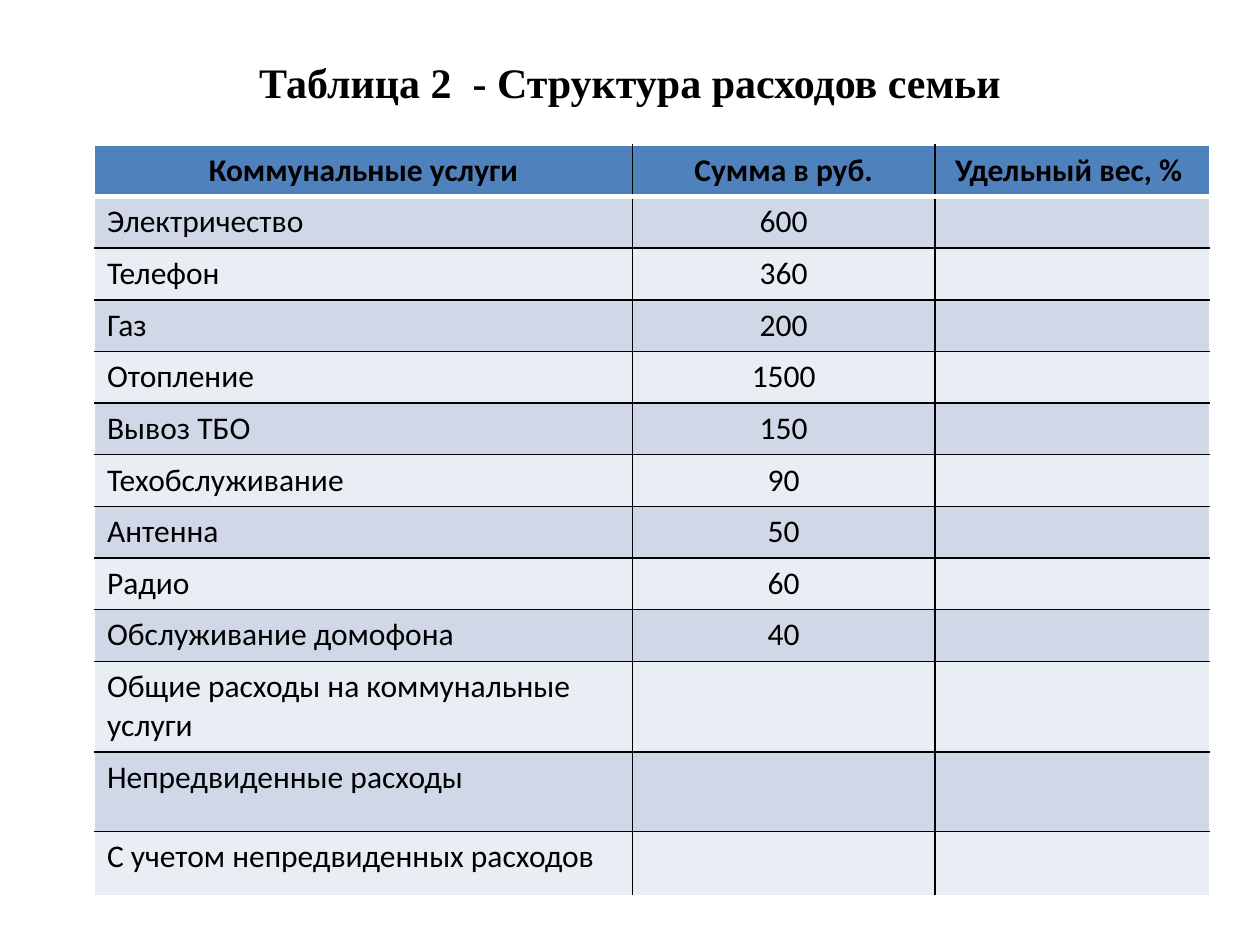
import lxml.etree
import pptx
import pptx.dml.color
import pptx.enum.text
import pptx.oxml.ns
import pptx.util

Inches = pptx.util.Inches
Pt = pptx.util.Pt
RGBColor = pptx.dml.color.RGBColor
PP_ALIGN = pptx.enum.text.PP_ALIGN
qn = pptx.oxml.ns.qn

BLACK = RGBColor(0x00, 0x00, 0x00)
WHITE = RGBColor(0xFF, 0xFF, 0xFF)
HEADER = RGBColor(0x4F, 0x81, 0xBD)
BANDS = (RGBColor(0xE9, 0xED, 0xF4), RGBColor(0xD0, 0xD8, 0xE8))

TITLE_FONT = {"name": "Times New Roman", "size": Pt(24), "bold": True}
HEADER_FONT = {"name": "Calibri", "size": Pt(18), "bold": True}
BODY_FONT = {"name": "Calibri", "size": Pt(18), "bold": False}

COL_WIDTHS = (4.27, 2.4, 2.18)
ROW_HEIGHTS = (0.41,) * 10 + (0.72, 0.63, 0.51)
ROWS = (
    ("Коммунальные услуги", "Сумма в руб.", "Удельный вес, % "),
    ("Электричество", "600", ""),
    ("Телефон", "360", ""),
    ("Газ", "200", ""),
    ("Отопление", "1500", ""),
    ("Вывоз ТБО", "150", ""),
    ("Техобслуживание", "90", ""),
    ("Антенна", "50", ""),
    ("Радио", "60", ""),
    ("Обслуживание домофона", "40", ""),
    ("Общие расходы на коммунальные услуги", "", ""),
    ("Непредвиденные расходы", "", ""),
    ("С учетом непредвиденных расходов", "", ""),
)


def write(p, text, font, align):
    p.alignment = align
    if not text:
        return
    r = p.add_run()
    r.text = text
    for name, value in font.items():
        setattr(r.font, name, value)
    r.font.color.rgb = BLACK


def set_borders(cell, borders):
    """Add cell lines, given as {side: (colour, points)} in schema order."""
    tc_pr = cell._tc.get_or_add_tcPr()
    for i, (side, (color, width)) in enumerate(borders.items()):
        ln = lxml.etree.Element(qn("a:ln" + side), w=str(Pt(width)))
        fill = lxml.etree.SubElement(ln, qn("a:solidFill"))
        lxml.etree.SubElement(fill, qn("a:srgbClr"), val=str(color))
        tc_pr.insert(i, ln)


def add_title(s, left, top, width, height):
    tf = s.shapes.add_textbox(left, top, width, height).text_frame
    tf.word_wrap = True
    tf.vertical_anchor = pptx.enum.text.MSO_ANCHOR.MIDDLE
    write(tf.paragraphs[0], "Таблица 2  - Структура расходов семьи",
          TITLE_FONT, PP_ALIGN.CENTER)


def add_expenses(s, left, top, width, height):
    last_row, last_col = len(ROWS) - 1, len(COL_WIDTHS) - 1
    table = s.shapes.add_table(len(ROWS), len(COL_WIDTHS),
                               left, top, width, height).table
    for column, size in zip(table.columns, COL_WIDTHS):
        column.width = Inches(size)
    for row, size in zip(table.rows, ROW_HEIGHTS):
        row.height = Inches(size)

    for i, texts in enumerate(ROWS):
        for j, text in enumerate(texts):
            cell = table.cell(i, j)
            centred = i == 0 or j > 0
            write(cell.text_frame.paragraphs[0], text,
                  BODY_FONT if i else HEADER_FONT,
                  PP_ALIGN.CENTER if centred else PP_ALIGN.LEFT)
            cell.fill.solid()
            cell.fill.fore_color.rgb = BANDS[i % 2] if i else HEADER
            # White outer frame and header rule, black inner grid
            set_borders(cell, {
                "L": (BLACK if j else WHITE, 1),
                "R": (BLACK if j < last_col else WHITE, 1),
                "T": (BLACK, 1) if i > 1 else (WHITE, 3 if i else 1),
                "B": (WHITE, 3) if i == 0 else
                     (BLACK if i < last_row else WHITE, 1),
            })


def main():
    prs = pptx.Presentation()
    prs.slide_width, prs.slide_height = Inches(10), Inches(7.5)
    s = prs.slides.add_slide(prs.slide_layouts[6])
    add_expenses(s, Inches(0.75), Inches(1.15), Inches(8.85), Inches(5.96))
    add_title(s, Inches(0.5), Inches(0.3), Inches(9), Inches(0.69))
    prs.save("out.pptx")


if __name__ == "__main__":
    main()
